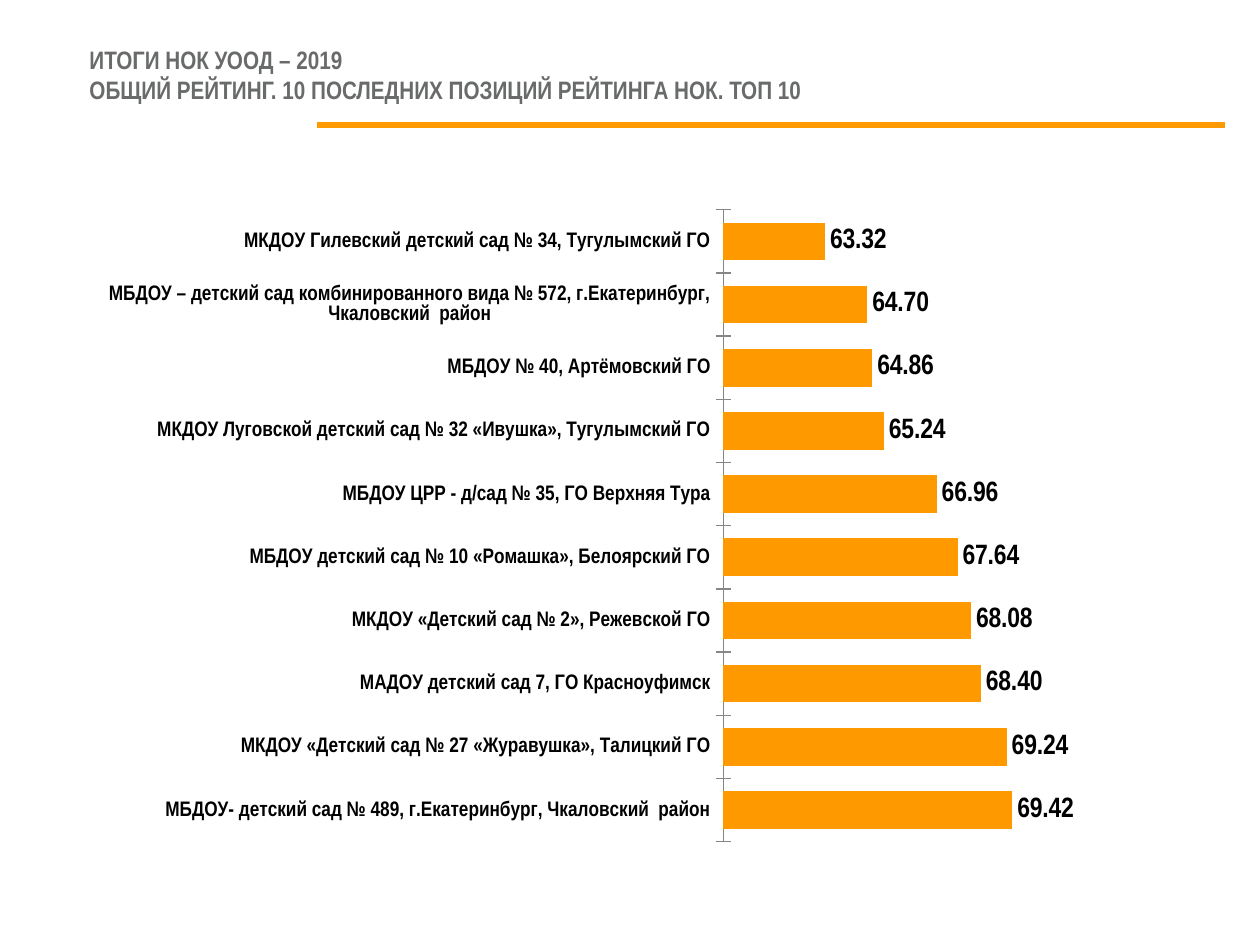
"""Build the slide with the ten last places of the kindergarten rating."""
from copy import deepcopy
from lxml.etree import SubElement
from pptx import Presentation
from pptx.chart.data import CategoryChartData as Data
from pptx.dml.color import RGBColor as Rgb
from pptx.enum.chart import XL_CHART_TYPE as Kind, XL_LABEL_POSITION as Spot
from pptx.enum.chart import XL_TICK_LABEL_POSITION as Tag, XL_TICK_MARK as Tick
from pptx.enum.shapes import MSO_CONNECTOR as Link
from pptx.enum.text import MSO_ANCHOR as Anchor, MSO_AUTO_SIZE as Fit, PP_ALIGN as Align
from pptx.oxml import parse_xml
from pptx.oxml.ns import nsdecls, qn
from pptx.util import Cm, Pt

FACE = "Arial Narrow"
ORANGE = "FF9900"


def tint(code):
    return Rgb.from_string(code)


def write(frame, text, size=14, color="000000", bold=False, align=Align.LEFT):
    para = frame.paragraphs[0]
    para.text = text
    para.alignment = align
    for run in para.runs:
        font = run.font
        font.name, font.size, font.bold = FACE, Pt(size), bold
        font.color.rgb = tint(color)
    for gap in para._p.findall(qn("a:br")):
        gap.append(deepcopy(para.runs[0].font._element))


rows = [
    ("МКДОУ Гилевский детский сад № 34, Тугулымский ГО", 63.32),
    ("МБДОУ – детский сад комбинированного вида № 572, г.Екатеринбург, Чкаловский  район", 64.70),
    ("МБДОУ № 40, Артёмовский ГО", 64.86),
    ("МКДОУ Луговской детский сад № 32 «Ивушка», Тугулымский ГО", 65.24),
    ("МБДОУ ЦРР - д/сад № 35, ГО Верхняя Тура", 66.96),
    ("МБДОУ детский сад № 10 «Ромашка», Белоярский ГО", 67.64),
    ("МКДОУ «Детский сад № 2», Режевской ГО", 68.08),
    ("МАДОУ детский сад 7, ГО Красноуфимск", 68.40),
    ("МКДОУ «Детский сад № 27 «Журавушка», Талицкий ГО", 69.24),
    ("МБДОУ- детский сад № 489, г.Екатеринбург, Чкаловский  район", 69.42),
]

deck = Presentation()
deck.slide_width, deck.slide_height = Cm(25.4), Cm(19.05)
slide = deck.slides.add_slide(deck.slide_layouts[5])

title = slide.shapes.title
title.left, title.top, title.width, title.height = Cm(1.55), Cm(1.09), Cm(22.86), Cm(1.45)
frame = title.text_frame
frame.word_wrap, frame.auto_size = True, Fit.NONE
frame.vertical_anchor = Anchor.BOTTOM
frame.margin_top, frame.margin_bottom = Cm(0), Cm(0.43)
write(
    frame,
    "ИТОГИ НОК УООД – 2019\vОБЩИЙ РЕЙТИНГ. 10 ПОСЛЕДНИХ ПОЗИЦИЙ РЕЙТИНГА НОК. ТОП 10",
    size=14.4, color="696B6B", bold=True,
)

rule = slide.shapes.add_connector(Link.STRAIGHT, Cm(6.4), Cm(2.52), Cm(24.69), Cm(2.52))
rule.line.color.rgb = tint(ORANGE)
rule.line.width = Pt(3)
SubElement(rule._element.spPr, qn("a:effectLst"))

data = Data(number_format="#,##0.00")
data.categories = [name for name, mark in rows]
data.add_series("Series 1", [mark for name, mark in rows])
chart = slide.shapes.add_chart(
    Kind.BAR_CLUSTERED, Cm(0.3), Cm(3.53), Cm(23.8), Cm(14), data
).chart
chart.has_legend = chart.has_title = False
chart.font.name, chart.font.size = FACE, Pt(14)
chart.font.color.rgb = tint("000000")

names = chart.category_axis
names.reverse_order = True
names.major_tick_mark, names.minor_tick_mark = Tick.CROSS, Tick.NONE
names.tick_label_position = Tag.LOW
names.has_major_gridlines = False
names.tick_labels.font.size, names.tick_labels.font.bold = Pt(12), True
names.format.line.color.rgb = tint("868686")

marks = chart.value_axis
marks.minimum_scale, marks.maximum_scale, marks.major_unit = 60, 75, 10
marks.has_major_gridlines = marks.visible = False

plot = chart.plots[0]
plot.gap_width, plot.vary_by_categories = 68, False
bars = plot.series[0]
bars.format.fill.solid()
bars.format.fill.fore_color.rgb = tint(ORANGE)
tags = bars.data_labels
tags.show_value, tags.position = True, Spot.OUTSIDE_END
tags.number_format, tags.number_format_is_linked = "#,##0.00", False
tags.font.size, tags.font.bold = Pt(16), True

area = chart._chartSpace.chart.plotArea
for old in area.findall(qn("c:layout")):
    area.remove(old)
sides = {"x": 0.6, "y": 0.05, "w": 0.39, "h": 0.91}
parts = '<c:layoutTarget val="inner"/><c:xMode val="edge"/><c:yMode val="edge"/>'
parts += "".join(f'<c:{side} val="{size}"/>' for side, size in sides.items())
area.insert(0, parse_xml(
    f'<c:layout {nsdecls("c")}><c:manualLayout>{parts}</c:manualLayout></c:layout>'
))

deck.save("out.pptx")
